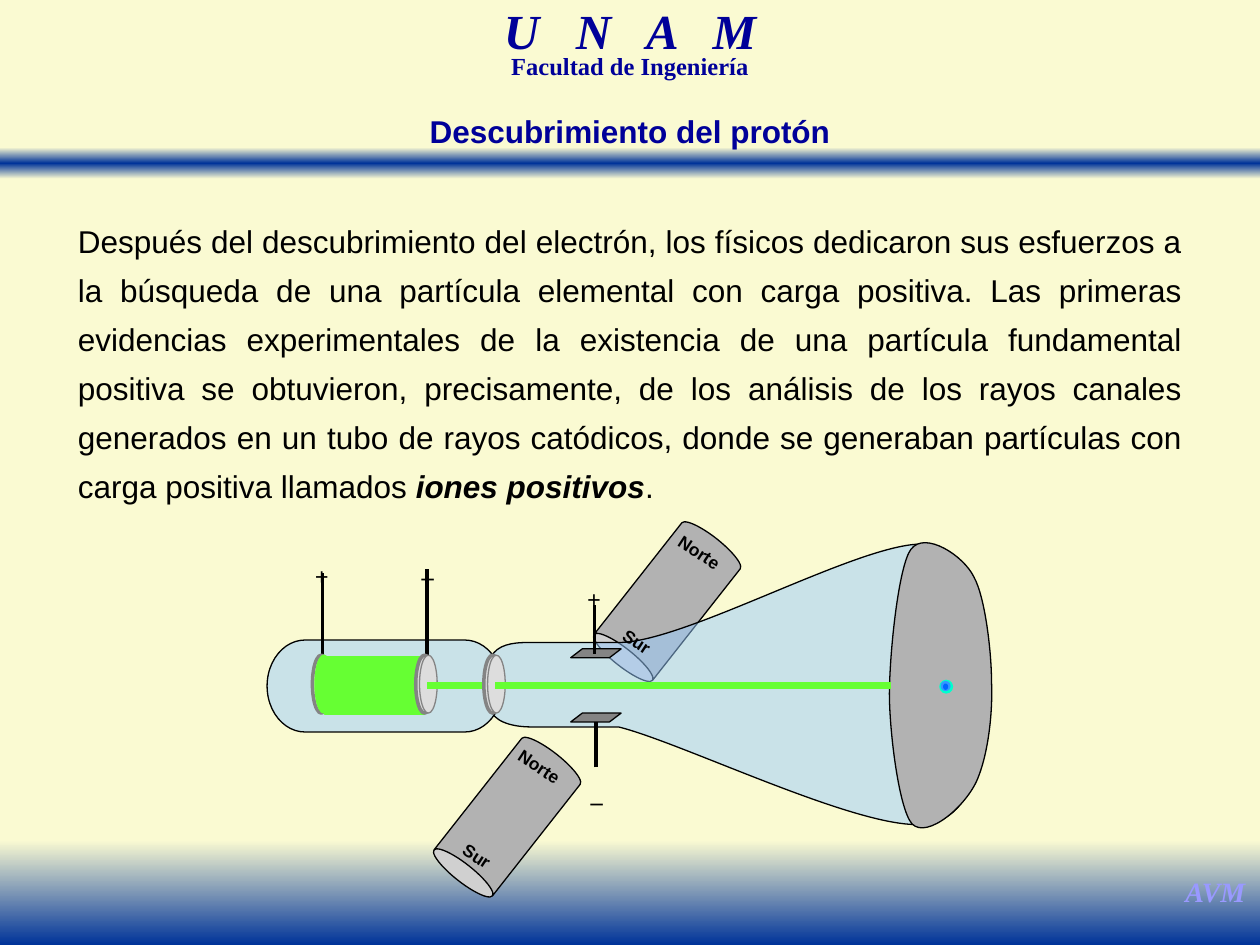
from copy import deepcopy
from dataclasses import dataclass

from lxml import etree
from pptx import Presentation
from pptx.dml.color import RGBColor
from pptx.enum.shapes import MSO_CONNECTOR, MSO_SHAPE
from pptx.enum.text import MSO_ANCHOR, MSO_AUTO_SIZE, PP_ALIGN
from pptx.oxml.ns import qn
from pptx.util import Inches, Pt

RECT, OVAL, CAN = MSO_SHAPE.RECTANGLE, MSO_SHAPE.OVAL, MSO_SHAPE.CAN
PILL, SLANT = MSO_SHAPE.FLOWCHART_TERMINATOR, MSO_SHAPE.PARALLELOGRAM
STRAIGHT = MSO_CONNECTOR.STRAIGHT
CENTER, JUSTIFY = PP_ALIGN.CENTER, PP_ALIGN.JUSTIFY
TOP, NO_FIT = MSO_ANCHOR.TOP, MSO_AUTO_SIZE.NONE
SANS, SERIF = "Arial", "Times New Roman"
GRID = 100
TILT, TURN = 33.2, 218.2
BEAM_Y = 5.44
DISC = (0.14, 0.46)

COLORS = {
    "cream": "FAFAD2", "blue": "003399", "navy": "000099", "lilac": "9999FF",
    "black": "000000", "gray": "B2B2B2", "dark": "848484", "pale": "DDDDDD",
    "glass": "99CCFF", "green": "66FF33", "ink": "000066",
    "aqua": "00FFCC", "sky": "3399FF", "core": "0066FF",
}


@dataclass
class Form:
    kind: int
    box: tuple
    fill: str
    edge: str = "black"
    width: float = 0.75
    turn: float = 0
    adjust: float | None = None
    alpha: int = 100


@dataclass
class Curve:
    start: tuple
    bends: list
    fill: str
    alpha: int = 100


@dataclass
class Wire:
    start: tuple
    end: tuple
    color: str = "black"
    width: float = 2


@dataclass
class Label:
    text: str
    box: tuple
    size: float
    face: str = SANS
    color: str = "black"
    bold: bool = True
    slant: bool = False
    turn: float = 0
    lift: int = 0
    wrap: bool = False
    align: int = CENTER
    space: float | None = None


def rgb(name: str) -> RGBColor:
    return RGBColor.from_string(COLORS[name])


def paint(shape, fill: str, edge: str, width: float, alpha: int) -> None:
    shape.shadow.inherit = False
    shape.fill.solid()
    shape.fill.fore_color.rgb = rgb(fill)
    if alpha < 100:
        tint = shape._element.spPr.find(qn("a:solidFill"))[0]
        etree.SubElement(tint, qn("a:alpha"), val=str(alpha * 1000))
    shape.line.color.rgb = rgb(edge)
    shape.line.width = Pt(width)


def draw_form(shapes, form: Form) -> None:
    shape = shapes.add_shape(form.kind, *map(Inches, form.box))
    shape.rotation = form.turn
    if form.adjust is not None:
        shape.adjustments[0] = form.adjust
    paint(shape, form.fill, form.edge, form.width, form.alpha)


def draw_curve(shapes, curve: Curve) -> None:
    points = [(b[i] * GRID, b[i + 1] * GRID) for b in curve.bends for i in (0, 2, 4)]
    x, y = curve.start
    pen = shapes.build_freeform(x * GRID, y * GRID, scale=Inches(1) / GRID)
    pen.add_line_segments(points, close=True)
    shape = pen.convert_to_shape()
    legs = list(shape._element.iter(qn("a:lnTo")))
    for i in range(0, len(legs), 3):
        bend = etree.Element(qn("a:cubicBezTo"))
        legs[i].addprevious(bend)
        for leg in legs[i:i + 3]:
            bend.append(leg[0])
            leg.getparent().remove(leg)
    paint(shape, curve.fill, "black", 0.75, curve.alpha)


def draw_wire(shapes, wire: Wire) -> None:
    line = shapes.add_connector(STRAIGHT, *map(Inches, wire.start + wire.end))
    line.line.color.rgb = rgb(wire.color)
    line.line.width = Pt(wire.width)
    etree.SubElement(line._element.spPr, qn("a:effectLst"))


def style(para, label: Label) -> None:
    para.alignment = label.align
    if label.space:
        para.line_spacing = label.space
    font = para.font
    font.name, font.size = label.face, Pt(label.size)
    font.bold, font.italic = label.bold, label.slant
    font.color.rgb = rgb(label.color)


def draw_label(shapes, label: Label):
    box = shapes.add_textbox(*map(Inches, label.box))
    box.rotation = label.turn
    box.text_frame.word_wrap = label.wrap
    para = box.text_frame.paragraphs[0]
    run = para.add_run()
    run.text = label.text
    style(para, label)
    if label.lift:
        run._r.get_or_add_rPr().set("baseline", str(label.lift * 1000))
    return para


def draw_band(shapes, box: tuple, mirror: bool) -> None:
    band = shapes.add_shape(RECT, *map(Inches, box))
    band.shadow.inherit = False
    band.line.fill.background()
    band.fill.gradient()
    band.fill.gradient_angle = 270
    for stop, name in zip(band.fill.gradient_stops, ("cream", "blue")):
        stop.color.rgb = rgb(name)
    if mirror:
        stops = band._element.spPr.find(qn("a:gradFill")).find(qn("a:gsLst"))
        stops[1].set("pos", "50000")
        stops.append(deepcopy(stops[0]))
        stops[2].set("pos", "100000")


def ring(x: float) -> list:
    return [Form(OVAL, (x, 5.2, *DISC), "pale", "dark", 2),
            Form(OVAL, (x + 0.03, 5.2, *DISC), "pale", "dark"),
            Form(RECT, (x + 0.09, 5.42, 0.02, 0.04), "ink", "black", 0.5)]


def magnet(x: float, y: float) -> Form:
    return Form(CAN, (x, y, 0.59, 1.27), "gray", turn=TURN, adjust=0.244)


def plate(y: float) -> Form:
    return Form(SLANT, (4.53, y, 0.4, 0.07), "dark", adjust=1.312)


def pole(text: str, x: float, y: float) -> Label:
    return Label(text, (x, y, 0.56 if text == "Norte" else 0.43, 0.27), 10, turn=TILT)


def sign(text: str, x: float, y: float, lift: int) -> Label:
    return Label(text, (x, y, 0.33 if text == "+" else 0.31, 0.37), 24, SERIF, lift=lift)


TUBE = Curve((3.9, 5.21), [
    (3.95, 5.12, 4.06, 5.1, 4.19, 5.1), (4.31, 5.1, 4.44, 5.1, 4.91, 5.1),
    (5.45, 5.1, 6.87, 4.28, 7.35, 4.32), (7.83, 4.37, 7.8, 5, 7.8, 5.37),
    (7.8, 5.74, 7.83, 6.48, 7.35, 6.54), (6.87, 6.61, 5.43, 5.9, 4.91, 5.77),
    (4.45, 5.77, 4.3, 5.77, 4.21, 5.77), (4.12, 5.77, 3.95, 5.75, 3.9, 5.65),
], "glass", 50)
SCREEN = Curve((7.06, 5.45), [
    (7.07, 5.08, 7.14, 4.48, 7.23, 4.36), (7.34, 4.21, 7.65, 4.41, 7.73, 4.58),
    (7.82, 4.74, 7.87, 5.18, 7.87, 5.41), (7.88, 5.63, 7.85, 5.96, 7.76, 6.18),
    (7.67, 6.4, 7.36, 6.66, 7.24, 6.54), (7.13, 6.42, 7.05, 5.74, 7.06, 5.45),
], "gray")
PARTS = [
    magnet(5, 4.14), TUBE,
    Form(PILL, (2.12, 5.08, 1.87, 0.73), "glass", alpha=50),
    Wire((2.56, 5.22), (2.56, 4.55)), Wire((3.39, 5.21), (3.39, 4.52)),
    Form(OVAL, (2.48, 5.2, *DISC), "pale", "dark", 2),
    sign("_", 3.24, 4.3, 30), sign("+", 2.39, 4.18, -25),
    Form(OVAL, (2.5, 5.2, *DISC), "green", "green"),
    Form(RECT, (2.58, 5.21, 0.79, 0.46), "green", "green"),
    *ring(3.3), Wire((3.97, BEAM_Y), (3.39, BEAM_Y), "green", 4), *ring(3.84),
    plate(5.15), Wire((4.72, 5.19), (4.72, 4.8)),
    Wire((4.73, 6.09), (4.73, 5.7)), plate(5.66),
    pole("Sur", 4.84, 4.96), SCREEN, magnet(3.73, 5.85),
    pole("Norte", 4, 5.95), pole("Sur", 3.57, 6.66), pole("Norte", 5.27, 4.25),
    Form(OVAL, (7.46, 5.4, 0.1, 0.1), "aqua", "aqua"),
    Form(OVAL, (7.47, 5.41, 0.07, 0.07), "sky", "sky"),
    Form(OVAL, (7.49, 5.43, 0.03, 0.04), "core", "core"),
    sign("+", 4.55, 4.55, 30), sign("_", 4.58, 5.9, -25),
    Wire((7.07, BEAM_Y), (3.93, BEAM_Y), "green", 4),
]
HEADS = [
    Label("U   N   A   M", (3.04, 0.08, 3.92, 0.43), 28, SERIF, "navy", slant=True, wrap=True, space=0.7),
    Label("Facultad de Ingeniería", (3.21, 0.42, 3.58, 0.26), 14, SERIF, "navy", wrap=True, space=0.7),
    Label("AVM", (9.3, 6.89, 0.69, 0.37), 16, SERIF, "lilac", slant=True),
]
TITLE = Label("Descubrimiento del protón", (2.83, 0.84, 4.34, 0.4), 18, color="navy")
BODY = Label(
    "Después del descubrimiento del electrón, los físicos dedicaron sus esfuerzos a la búsqueda de una "
    "partícula elemental con carga positiva. Las primeras evidencias experimentales de la existencia de "
    "una partícula fundamental positiva se obtuvieron, precisamente, de los análisis de los rayos canales "
    "generados en un tubo de rayos catódicos, donde se generaban partículas con carga positiva llamados ",
    (0.52, 1.62, 8.96, 2.44), 18, bold=False, wrap=True, align=JUSTIFY, space=1.3)
DRAW = {Form: draw_form, Curve: draw_curve, Wire: draw_wire, Label: draw_label}


def place_title(title) -> None:
    title.left, title.top, title.width, title.height = map(Inches, TITLE.box)
    frame = title.text_frame
    frame.text = TITLE.text
    frame.vertical_anchor, frame.auto_size = TOP, NO_FIT
    style(frame.paragraphs[0], TITLE)
    title._element.getparent().append(title._element)


def main() -> None:
    deck = Presentation()
    deck.slide_width, deck.slide_height = Inches(10), Inches(7.5)
    slide = deck.slides.add_slide(deck.slide_layouts[5])
    slide.background.fill.solid()
    slide.background.fill.fore_color.rgb = rgb("cream")
    shapes = slide.shapes
    draw_band(shapes, (0, 1.17, 10, 0.25), True)
    draw_band(shapes, (0, 6.67, 10, 0.83), False)
    for head in HEADS:
        draw_label(shapes, head)
    para = draw_label(shapes, BODY)
    for text, strong in (("iones positivos", True), (".", False)):
        run = para.add_run()
        run.text = text
        run.font.bold = run.font.italic = strong
    for part in PARTS:
        DRAW[type(part)](shapes, part)
    place_title(shapes.title)
    deck.save("out.pptx")


if __name__ == "__main__":
    main()
